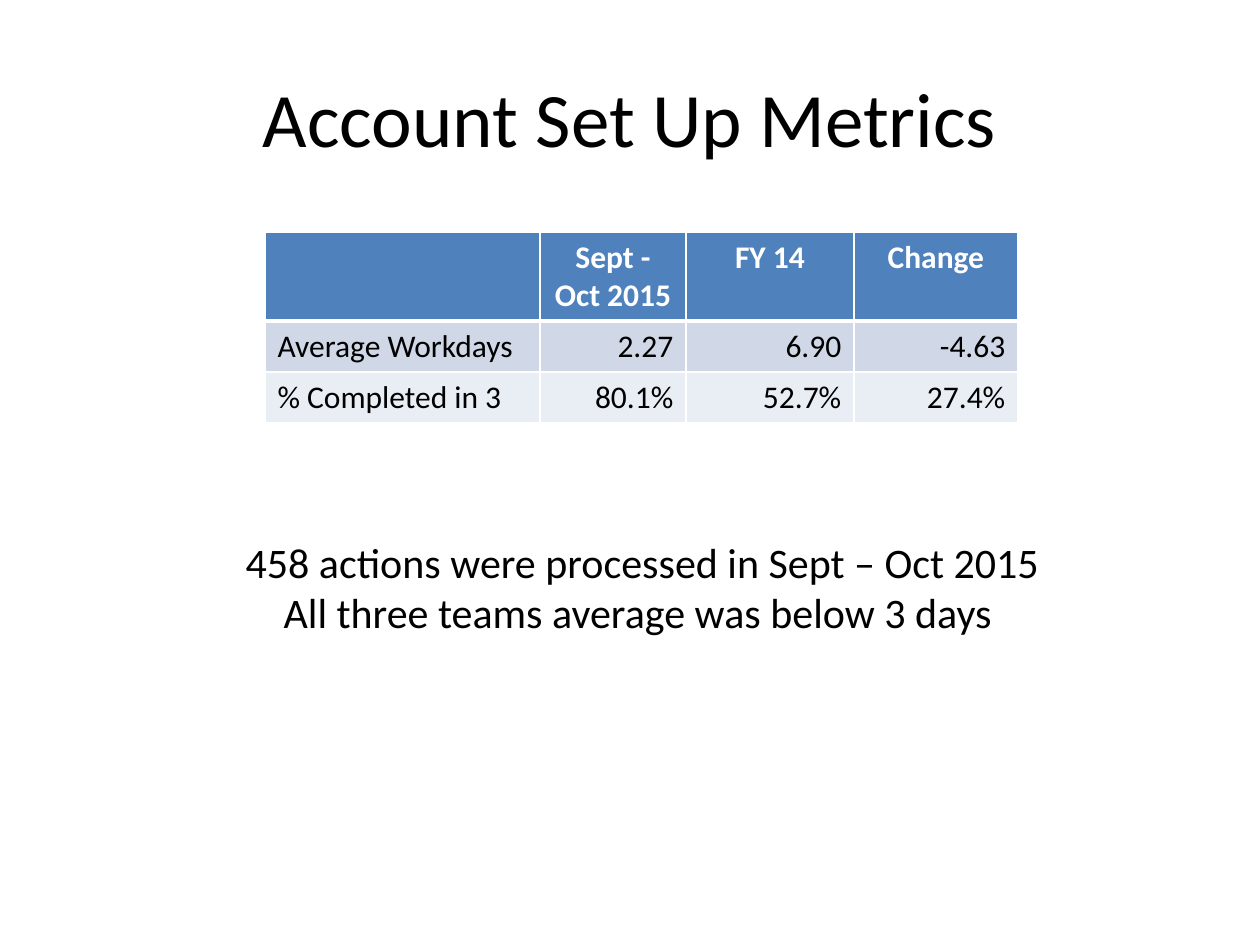
from dataclasses import dataclass

import pptx
import pptx.dml.color
import pptx.enum.text
import pptx.oxml
import pptx.oxml.ns
import pptx.util

EMU_PER_PX = 914400 / 126
ALIGN = pptx.enum.text.PP_ALIGN
ANCHOR = pptx.enum.text.MSO_ANCHOR


@dataclass(frozen=True)
class Theme:
    font: str = "Calibri"
    ink: str = "000000"
    white: str = "FFFFFF"
    header_fill: str = "4F81BD"
    band_fills: tuple[str, str] = ("D0D8E8", "E9EDF4")
    title_size: int = 44
    note_size: int = 24
    table_size: int = 18
    thin_border: int = 1
    header_border: int = 3


@dataclass(frozen=True)
class TextBlock:
    left: int
    top: int
    width: int
    height: int
    lines: tuple[str, ...]
    size: int
    anchor: ANCHOR


@dataclass(frozen=True)
class MetricRow:
    values: tuple[str, ...]
    height: int
    fill: str
    header: bool = False


THEME = Theme()
TABLE_LEFT, TABLE_TOP = 265, 232
COLUMN_WIDTHS = (275, 146, 168, 164)

TEXT_BLOCKS = (
    TextBlock(63, 38, 1134, 157, ("Account Set Up Metrics",), THEME.title_size, ANCHOR.MIDDLE),
    TextBlock(208, 530, 869, 115,
              ("458 actions were processed in Sept – Oct 2015",
               "All three teams average was below 3 days "),
              THEME.note_size, ANCHOR.TOP),
)
METRICS = (
    MetricRow(("", "Sept - Oct 2015", "FY 14", "Change"), 89, THEME.header_fill, header=True),
    MetricRow(("Average Workdays", "2.27", "6.90", "-4.63"), 51, THEME.band_fills[0]),
    MetricRow(("% Completed in 3", "80.1%", "52.7%", "27.4%"), 51, THEME.band_fills[1]),
)


def px(length: int) -> pptx.util.Emu:
    return pptx.util.Emu(round(length * EMU_PER_PX))


def rgb(color: str) -> pptx.dml.color.RGBColor:
    return pptx.dml.color.RGBColor.from_string(color)


def style(paragraph, size: int, color: str, align: ALIGN, bold: bool = False) -> None:
    paragraph.alignment = align
    paragraph.font.name = THEME.font
    paragraph.font.size = pptx.util.Pt(size)
    paragraph.font.bold = bold
    paragraph.font.color.rgb = rgb(color)


def draw_text(slide, block: TextBlock) -> None:
    frame = slide.shapes.add_textbox(
        px(block.left), px(block.top), px(block.width), px(block.height)).text_frame
    frame.word_wrap = True
    frame.vertical_anchor = block.anchor
    frame.text = "\n".join(block.lines)
    for paragraph in frame.paragraphs:
        style(paragraph, block.size, THEME.ink, ALIGN.CENTER)


def draw_borders(cell, top: int, bottom: int) -> None:
    widths = {"lnL": THEME.thin_border, "lnR": THEME.thin_border, "lnT": top, "lnB": bottom}
    properties = cell._tc.get_or_add_tcPr()
    for side, width in widths.items():
        properties.append(pptx.oxml.parse_xml(
            f'<a:{side} {pptx.oxml.ns.nsdecls("a")} w="{pptx.util.Pt(width)}">'
            f'<a:solidFill><a:srgbClr val="{THEME.white}"/></a:solidFill></a:{side}>'))


def draw_metrics(slide, rows: tuple[MetricRow, ...]) -> None:
    table = slide.shapes.add_table(
        len(rows), len(COLUMN_WIDTHS), px(TABLE_LEFT), px(TABLE_TOP),
        px(sum(COLUMN_WIDTHS)), px(sum(row.height for row in rows))).table
    for column, width in zip(table.columns, COLUMN_WIDTHS):
        column.width = px(width)

    border_above = THEME.thin_border
    for row_index, row in enumerate(rows):
        table.rows[row_index].height = px(row.height)
        border_below = THEME.header_border if row.header else THEME.thin_border
        for column_index, value in enumerate(row.values):
            cell = table.cell(row_index, column_index)
            cell.text = value
            draw_borders(cell, border_above, border_below)
            cell.fill.solid()
            cell.fill.fore_color.rgb = rgb(row.fill)
            if row.header:
                align = ALIGN.CENTER
            else:
                align = ALIGN.RIGHT if column_index else ALIGN.LEFT
            style(cell.text_frame.paragraphs[0], THEME.table_size,
                  THEME.white if row.header else THEME.ink, align, row.header)
        border_above = border_below


def main() -> None:
    presentation = pptx.Presentation()
    presentation.slide_width, presentation.slide_height = px(1260), px(945)
    slide = presentation.slides.add_slide(presentation.slide_layouts[6])
    slide.background.fill.solid()
    slide.background.fill.fore_color.rgb = rgb(THEME.white)

    # Title and closing remarks
    for block in TEXT_BLOCKS:
        draw_text(slide, block)

    # Metrics table
    draw_metrics(slide, METRICS)

    presentation.save("out.pptx")


if __name__ == "__main__":
    main()
